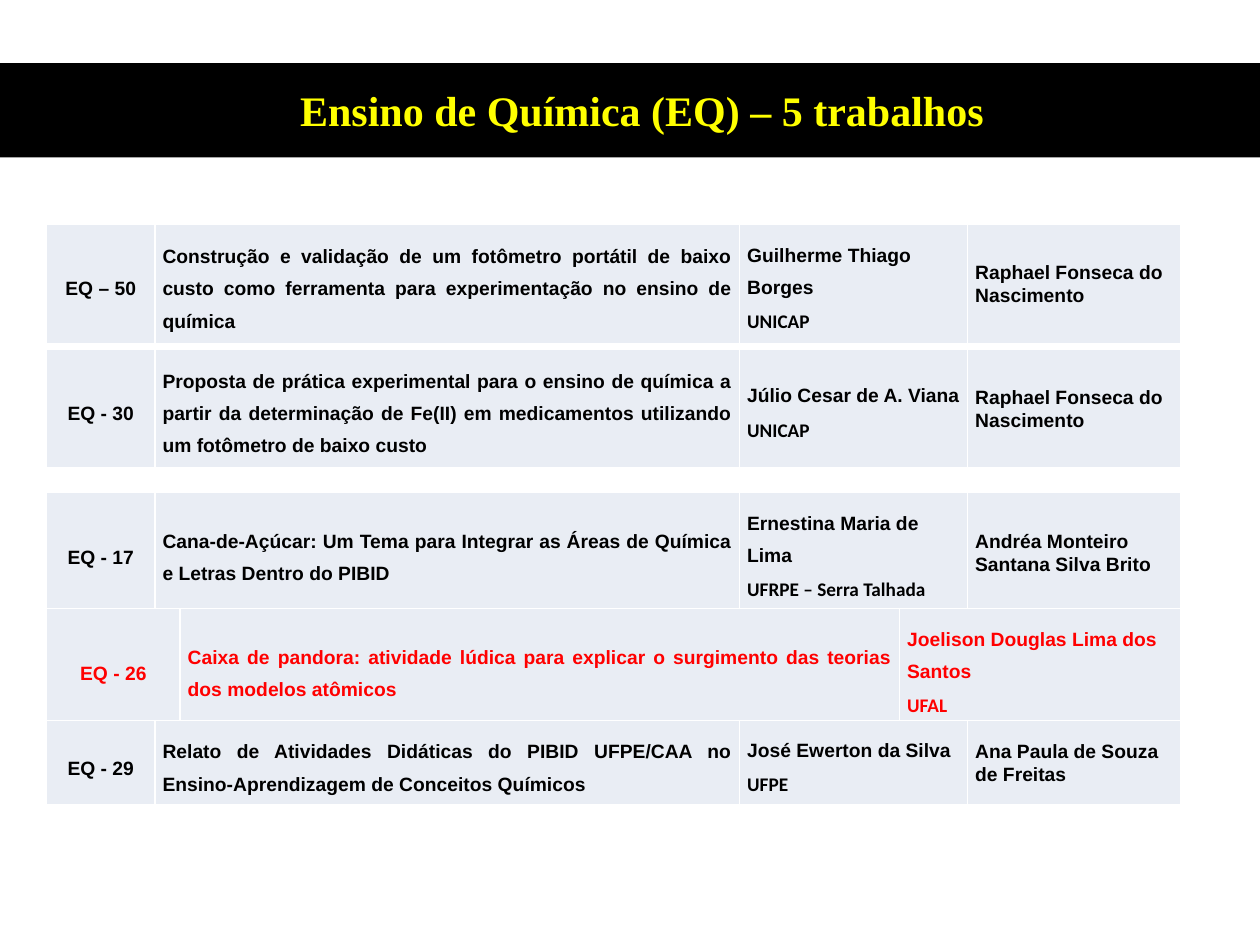
from dataclasses import dataclass

from lxml.etree import SubElement
from pptx import Presentation
from pptx.dml.color import RGBColor
from pptx.enum.shapes import MSO_SHAPE
from pptx.enum.text import MSO_ANCHOR, MSO_AUTO_SIZE, PP_ALIGN
from pptx.oxml.ns import qn
from pptx.util import Inches, Pt


@dataclass(frozen=True)
class Theme:
    banner: str = "000000"
    title: str = "FFFF00"
    text: str = "000000"
    highlight: str = "FF0000"
    cell: str = "E9EDF4"
    border: str = "FFFFFF"
    title_font: str = "Times New Roman"
    body_font: str = "Arial"
    school_font: str = "Calibri"
    title_size: int = 24
    body_size: int = 11
    border_width: int = 1


class SlideBuilder:
    def __init__(self, page, theme):
        self.page = page
        self.theme = theme

    def banner(self, left, top, width, height):
        bar = self.page.shapes.add_shape(
            MSO_SHAPE.RECTANGLE, Inches(left), Inches(top), Inches(width), Inches(height))
        bar.shadow.inherit = False
        bar.fill.solid()
        bar.fill.fore_color.rgb = RGBColor.from_string(self.theme.banner)
        bar.line.fill.background()

    def title(self, text, left, top, width, height):
        box = self.page.shapes.add_textbox(
            Inches(left), Inches(top), Inches(width), Inches(height))
        frame = box.text_frame
        frame.word_wrap = True
        frame.auto_size = MSO_AUTO_SIZE.SHAPE_TO_FIT_TEXT
        para = frame.paragraphs[0]
        para.alignment = PP_ALIGN.CENTER
        self.span(para, text, self.theme.title_font, self.theme.title_size, self.theme.title)

    def span(self, para, text, font, size, color):
        span = para.add_run()
        span.text = text
        span.font.name = font
        span.font.size = Pt(size)
        span.font.bold = True
        span.font.color.rgb = RGBColor.from_string(color)

    def work(self, top, height, widths, code, subject, author, school, presenter, color):
        """One table row: code, subject, author with school, and presenter if any."""
        body, school_font = self.theme.body_font, self.theme.school_font
        contents = [
            (PP_ALIGN.CENTER, [(code, body)]),
            (PP_ALIGN.JUSTIFY, [(subject, body)]),
            (PP_ALIGN.LEFT, [(author, body), (school, school_font)]),
        ]
        if presenter:
            contents.append((PP_ALIGN.LEFT, [(presenter, body)]))
        table = self.page.shapes.add_table(
            1, len(widths), Inches(0.37), Inches(top),
            Inches(sum(widths)), Inches(height)).table
        table.first_row = table.horz_banding = False
        for index, (width, (alignment, lines)) in enumerate(zip(widths, contents)):
            table.columns[index].width = Inches(width)
            self.cell(table.cell(0, index), alignment, lines, color, compact=index == 3)

    def cell(self, cell, alignment, lines, color, compact):
        self.borders(cell)
        cell.fill.solid()
        cell.fill.fore_color.rgb = RGBColor.from_string(self.theme.cell)
        cell.vertical_anchor = MSO_ANCHOR.MIDDLE
        cell.margin_left = cell.margin_right = Inches(0.06)
        cell.margin_top = cell.margin_bottom = Inches(0 if compact else 0.06)
        frame = cell.text_frame
        for index, (text, font) in enumerate(lines):
            para = frame.add_paragraph() if index else frame.paragraphs[0]
            para.alignment = alignment
            para.line_spacing = 1.07 if compact else 1.5
            if compact:
                para.space_after = Pt(5)
            self.span(para, text, font, self.theme.body_size, color)

    def borders(self, cell):
        properties = cell._tc.get_or_add_tcPr()
        for side in ("a:lnL", "a:lnR", "a:lnT", "a:lnB"):
            line = SubElement(properties, qn(side), w=str(Pt(self.theme.border_width)))
            fill = SubElement(line, qn("a:solidFill"))
            SubElement(fill, qn("a:srgbClr"), val=self.theme.border)


def main():
    deck = Presentation()
    deck.slide_width, deck.slide_height = Inches(10), Inches(7.5)
    theme = Theme()
    builder = SlideBuilder(deck.slides.add_slide(deck.slide_layouts[6]), theme)

    # Heading
    builder.banner(0, 0.5, 10, 0.75)
    builder.title("Ensino de Química (EQ) – 5 trabalhos", 0.27, 0.62, 9.65, 0.5)

    # Works: top, row height, code, subject, author, school, presenter
    works = [
        (1.78, 0.64, "EQ – 50",
         "Construção e validação de um fotômetro portátil de baixo custo como "
         "ferramenta para experimentação no ensino de química",
         "Guilherme Thiago Borges", "UNICAP", "Raphael Fonseca do Nascimento"),
        (2.77, 0.9, "EQ - 30",
         "Proposta de prática experimental para o ensino de química a partir da "
         "determinação de Fe(II) em medicamentos utilizando um fotômetro de baixo custo",
         "Júlio Cesar de A. Viana", "UNICAP", "Raphael Fonseca do Nascimento"),
        (3.91, 0.64, "EQ - 17",
         "Cana-de-Açúcar: Um Tema para Integrar as Áreas de Química e Letras "
         "Dentro do PIBID",
         "Ernestina Maria de Lima", "UFRPE – Serra Talhada",
         "Andréa Monteiro Santana Silva Brito"),
        (4.83, 0.64, "EQ - 26",
         "Caixa de pandora: atividade lúdica para explicar o surgimento das "
         "teorias dos modelos atômicos",
         "Joelison Douglas Lima dos Santos", "UFAL", None),
        (5.72, 0.64, "EQ - 29",
         "Relato de Atividades Didáticas do PIBID UFPE/CAA no "
         "Ensino-Aprendizagem de Conceitos Químicos",
         "José Ewerton da Silva", "UFPE", "Ana Paula de Souza de Freitas"),
    ]
    for top, height, *texts in works:
        has_presenter = texts[-1] is not None
        widths = (0.86, 4.64, 1.81, 1.69) if has_presenter else (1.06, 5.71, 2.23)
        color = theme.text if has_presenter else theme.highlight
        builder.work(top, height, widths, *texts, color)

    deck.save("out.pptx")


if __name__ == "__main__":
    main()
